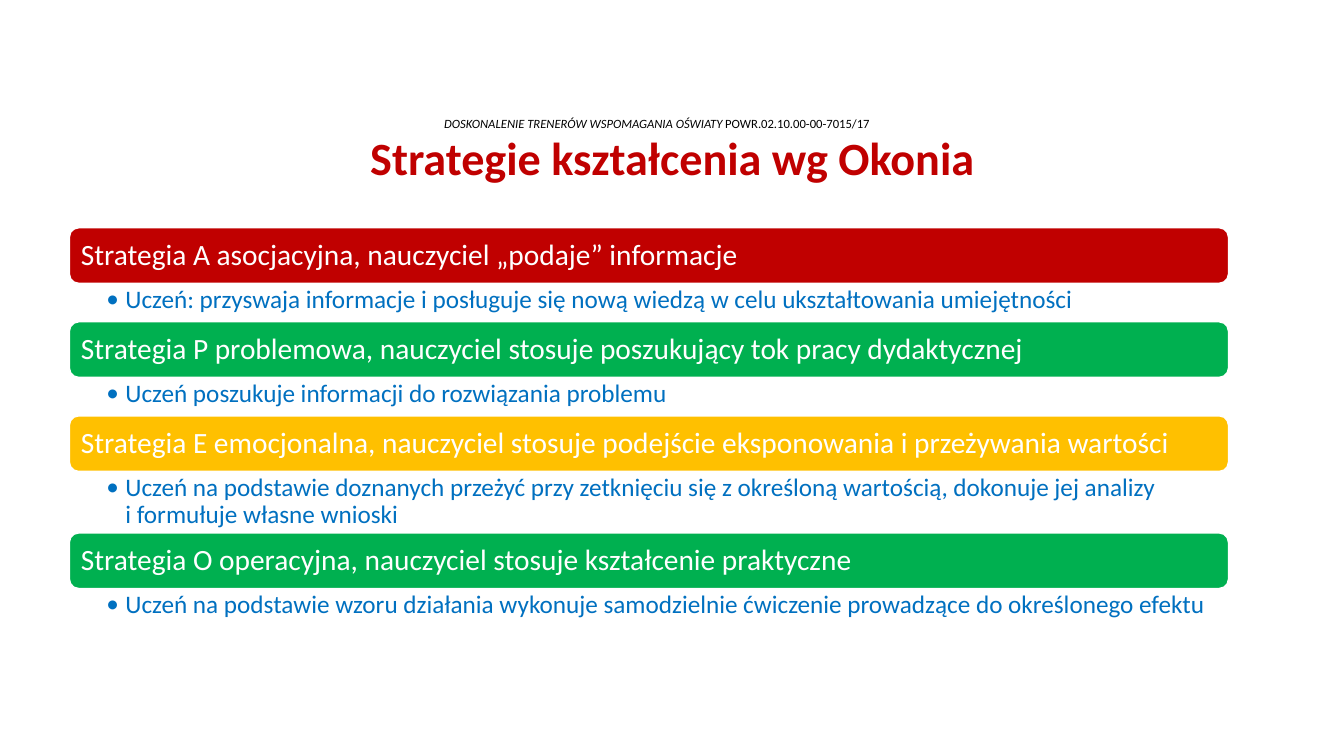
"""Build the slide on teaching strategies according to Okoń."""
from lxml import etree
from pptx import Presentation
from pptx.dml.color import RGBColor
from pptx.enum.shapes import MSO_SHAPE
from pptx.enum.text import MSO_ANCHOR, MSO_AUTO_SIZE, PP_ALIGN
from pptx.oxml.ns import qn
from pptx.util import Cm, Pt

ROUNDED = MSO_SHAPE.ROUNDED_RECTANGLE
TOP, MIDDLE = MSO_ANCHOR.TOP, MSO_ANCHOR.MIDDLE
LEFT, CENTER = PP_ALIGN.LEFT, PP_ALIGN.CENTER
NO_AUTOFIT = MSO_AUTO_SIZE.NONE

BLACK = RGBColor(0x00, 0x00, 0x00)
WHITE = RGBColor(0xFF, 0xFF, 0xFF)
RED = RGBColor(0xC0, 0x00, 0x00)
GREEN = RGBColor(0x00, 0xB0, 0x50)
AMBER = RGBColor(0xFF, 0xC0, 0x00)
BLUE = RGBColor(0x00, 0x70, 0xC0)

BAND_LEFT, BAND_WIDTH = Cm(1.75), Cm(29.21)
BAR_HEIGHT = Cm(1.4)
DETAIL_HEIGHTS = {1: Cm(0.97), 2: Cm(1.55)}
BULLET_INDENT = Cm(0.48)

STRATEGIES = [
    (RED, "Strategia A asocjacyjna, nauczyciel „podaje” informacje",
     "Uczeń: przyswaja informacje i posługuje się nową wiedzą w celu ukształtowania umiejętności"),
    (GREEN, "Strategia P problemowa, nauczyciel stosuje poszukujący tok pracy dydaktycznej",
     "Uczeń poszukuje informacji do rozwiązania problemu"),
    (AMBER, "Strategia E emocjonalna, nauczyciel stosuje podejście eksponowania i przeżywania wartości",
     "Uczeń na podstawie doznanych przeżyć przy zetknięciu się z określoną wartością, "
     "dokonuje jej analizy\ni formułuje własne wnioski"),
    (GREEN, "Strategia O operacyjna, nauczyciel stosuje kształcenie praktyczne",
     "Uczeń na podstawie wzoru działania wykonuje samodzielnie ćwiczenie prowadzące do określonego efektu"),
]


def write(shape, text, size, color, align=LEFT, anchor=MIDDLE,
          margins=(0.25, 0.13, 0.25, 0.13), bold=False, italic=False):
    frame = shape.text_frame
    frame.word_wrap = True
    frame.auto_size = NO_AUTOFIT
    frame.vertical_anchor = anchor
    (frame.margin_left, frame.margin_top,
     frame.margin_right, frame.margin_bottom) = [Cm(margin) for margin in margins]
    paragraph = frame.paragraphs[0]
    paragraph.alignment = align
    paragraph.line_spacing = 0.9
    paragraph.space_before = Pt(0)
    for number, line in enumerate(text.split("\n")):
        if number:
            paragraph.add_line_break()
        run = paragraph.add_run()
        run.text = line
        run.font.name = "Calibri"
        run.font.size = Pt(size)
        run.font.color.rgb = color
        run.font.bold = bold
        run.font.italic = italic


def add_bullet(shape):
    properties = shape.text_frame.paragraphs[0]._p.get_or_add_pPr()
    properties.set("marL", str(BULLET_INDENT))
    properties.set("indent", str(-BULLET_INDENT))
    etree.SubElement(properties, qn("a:buFont")).set("typeface", "Calibri")
    etree.SubElement(properties, qn("a:buChar")).set("char", "•")


presentation = Presentation()
presentation.slide_width, presentation.slide_height = Cm(33.87), Cm(19.05)
slide = presentation.slides.add_slide(presentation.slide_layouts.get_by_name("Comparison"))

project = slide.shapes.add_textbox(Cm(2), Cm(2.97), Cm(29.11), Cm(0.4))
no_margins = (0, 0, 0, 0)
write(project, "DOSKONALENIE TRENERÓW WSPOMAGANIA OŚWIATY ", 9, BLACK,
      align=CENTER, anchor=TOP, margins=no_margins, italic=True)
write(project, "POWR.02.10.00-00-7015/17", 9, BLACK,
      align=CENTER, anchor=TOP, margins=no_margins)

title = slide.shapes.title
title.left, title.top, title.width, title.height = Cm(2.34), Cm(3.35), Cm(29.21), Cm(1.37)
write(title, "Strategie kształcenia wg Okonia", 33, RED, align=CENTER, bold=True)

top = Cm(5.74)
details = list(slide.placeholders)[1:5]
for detail, (color, strategy, student_role) in zip(details, STRATEGIES):
    bar = slide.shapes.add_shape(ROUNDED, BAND_LEFT, top, BAND_WIDTH, BAR_HEIGHT)
    bar.shadow.inherit = False
    bar.fill.solid()
    bar.fill.fore_color.rgb = color
    bar.line.color.rgb = WHITE
    bar.line.width = Pt(1)
    write(bar, strategy, 21, WHITE, margins=(0.22, 0.22, 0.22, 0.22))
    top += BAR_HEIGHT

    detail.left, detail.top, detail.width = BAND_LEFT, top, BAND_WIDTH
    detail.height = DETAIL_HEIGHTS[len(student_role.split("\n"))]
    add_bullet(detail)
    write(detail, student_role, 18, BLUE, anchor=TOP, margins=(0.93, 0.08, 0.35, 0.08))
    top += detail.height

presentation.save("out.pptx")
